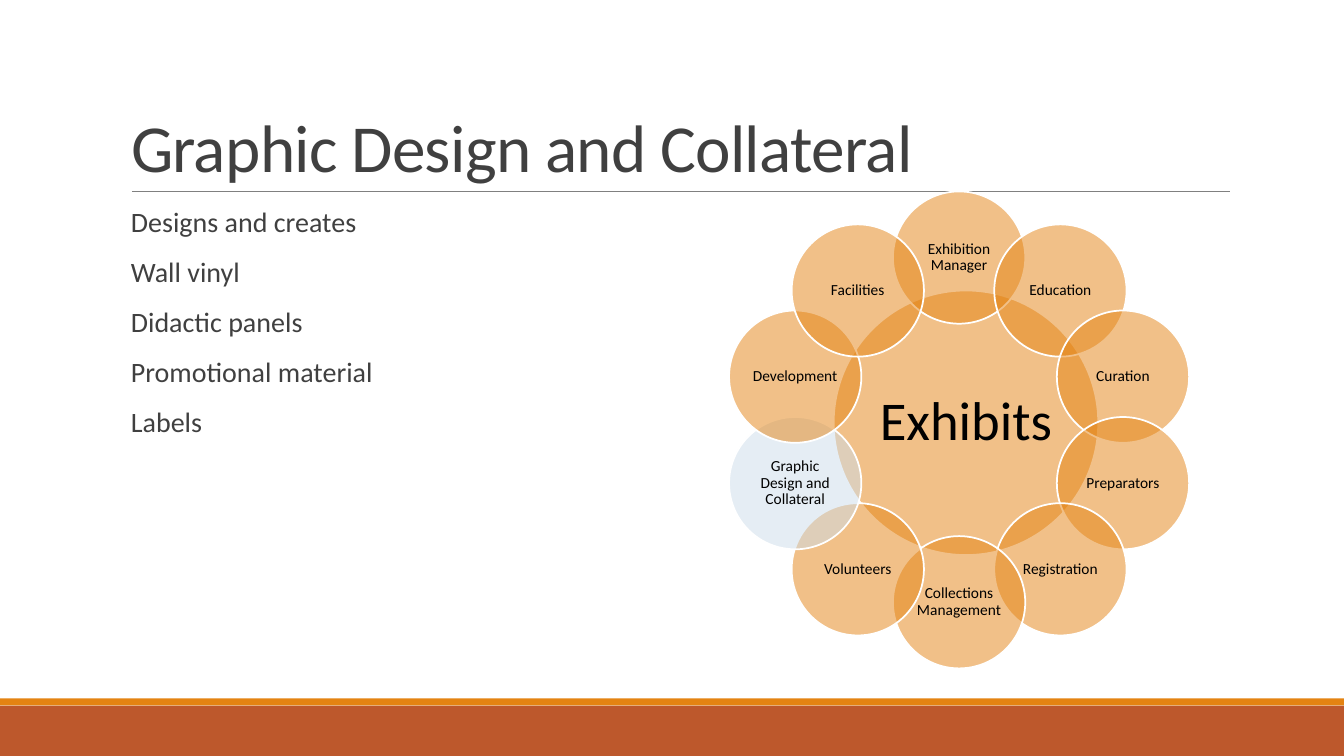
"""Build the Graphic Design and Collateral slide with its ring of exhibit roles."""
from math import cos, pi, sin

from lxml import etree
from pptx import Presentation
from pptx.dml.color import RGBColor
from pptx.enum.shapes import MSO_CONNECTOR, MSO_SHAPE
from pptx.enum.text import MSO_ANCHOR, MSO_AUTO_SIZE, PP_ALIGN
from pptx.oxml.ns import qn
from pptx.util import Pt

RECTANGLE, OVAL = MSO_SHAPE.RECTANGLE, MSO_SHAPE.OVAL
STRAIGHT = MSO_CONNECTOR.STRAIGHT
TOP, MIDDLE, BOTTOM = MSO_ANCHOR.TOP, MSO_ANCHOR.MIDDLE, MSO_ANCHOR.BOTTOM
LEFT, CENTER = PP_ALIGN.LEFT, PP_ALIGN.CENTER
NO_AUTOFIT = MSO_AUTO_SIZE.NONE

ORANGE = RGBColor(0xE4, 0x83, 0x12)
RUST = RGBColor(0xBD, 0x58, 0x2C)
PALE_BLUE = RGBColor(0xCC, 0xDD, 0xEA)
GREY = RGBColor(0x80, 0x80, 0x80)
DARK_GREY = RGBColor(0x40, 0x40, 0x40)
BLACK = RGBColor(0, 0, 0)
WHITE = RGBColor(0xFF, 0xFF, 0xFF)

WIDTH, HEIGHT = 960, 540
TITLE = "Graphic Design and Collateral"
DUTIES = ["Designs and creates", "Wall vinyl", "Didactic panels",
          "Promotional material", "Labels"]
ROLES = ["Exhibition Manager", "Education", "Curation", "Preparators",
         "Registration", "Collections Management", "Volunteers", TITLE,
         "Development", "Facilities"]
RING_X, RING_Y, RING_RADIUS = 685.1, 307.1, 123.1
ROLE_SIZE, HUB_SIZE = 94.5, 189
HUB_X, HUB_Y = 690, 302


class SlideBuilder:
    """Draw styled elements on one slide, with lengths in points."""

    font_name = "Calibri"

    def __init__(self, slide):
        self.slide = slide

    def fill_text(self, frame, lines, size, color, align, anchor, insets,
                  spacing=0.9):
        """Fill a text frame with one paragraph per line."""
        frame.word_wrap = True
        frame.auto_size = NO_AUTOFIT
        frame.vertical_anchor = anchor
        side, edge = insets
        frame.margin_left = frame.margin_right = Pt(side)
        frame.margin_top = frame.margin_bottom = Pt(edge)
        for index, line in enumerate(lines):
            paragraph = frame.add_paragraph() if index else frame.paragraphs[0]
            paragraph.alignment = align
            paragraph.line_spacing = spacing
            paragraph.space_before = Pt(12 if index else 0)
            paragraph.space_after = Pt(2 if len(lines) > 1 else 0)
            run = paragraph.add_run()
            run.text = line
            run.font.name = self.font_name
            run.font.size = Pt(size)
            run.font.color.rgb = color

    def title(self, text, left, top, width, height):
        """Place and format the title placeholder."""
        heading = self.slide.shapes.title
        heading.left, heading.top = Pt(left), Pt(top)
        heading.width, heading.height = Pt(width), Pt(height)
        self.fill_text(heading.text_frame, [text], 48, DARK_GREY, LEFT, BOTTOM,
                       (7.2, 3.6), 0.85)
        for properties in heading.element.iter(qn("a:rPr")):
            properties.set("spc", "-50")

    def text_list(self, lines, left, top, width, height):
        """Add a box with one plain paragraph per line."""
        box = self.slide.shapes.add_textbox(Pt(left), Pt(top), Pt(width), Pt(height))
        self.fill_text(box.text_frame, lines, 20, DARK_GREY, LEFT, TOP, (7.2, 3.6))

    def shape(self, kind, left, top, width, height, color):
        """Add a filled preset shape without shadow or outline."""
        shape = self.slide.shapes.add_shape(
            kind, Pt(left), Pt(top), Pt(width), Pt(height))
        shape.shadow.inherit = False
        shape.fill.solid()
        shape.fill.fore_color.rgb = color
        shape.line.fill.background()
        return shape

    def circle(self, label, x, y, diameter, color, size, inset):
        """Add a half-transparent labelled circle centred on a point."""
        circle = self.shape(OVAL, x - diameter / 2, y - diameter / 2,
                            diameter, diameter, color)
        fill_color = circle.element.spPr.find(qn("a:solidFill")).find(qn("a:srgbClr"))
        etree.SubElement(fill_color, qn("a:alpha")).set("val", "50000")
        circle.line.color.rgb = WHITE
        circle.line.width = Pt(1.25)
        self.fill_text(circle.text_frame, [label], size, BLACK, CENTER, MIDDLE,
                       (inset, inset))

    def rule(self, left, right, y):
        """Add a thin horizontal line."""
        line = self.slide.shapes.add_connector(
            STRAIGHT, Pt(left), Pt(y), Pt(right), Pt(y))
        line.line.color.rgb = GREY
        line.line.width = Pt(0.5)
        etree.SubElement(line.element.spPr, qn("a:effectLst"))


def main():
    """Build and save the slide."""
    deck = Presentation()
    deck.slide_width, deck.slide_height = Pt(WIDTH), Pt(HEIGHT)
    builder = SlideBuilder(deck.slides.add_slide(deck.slide_layouts[5]))

    builder.shape(RECTANGLE, 0, 504, WIDTH, 36, RUST)
    builder.shape(RECTANGLE, 0, 498.8, WIDTH, 5.04, ORANGE)
    builder.rule(94.3, 878.8, 136.8)
    builder.title(TITLE, 86.4, 22.6, 792, 114.2)
    builder.text_list(DUTIES, 86.4, 145.4, 792, 316.8)

    builder.circle("Exhibits", HUB_X, HUB_Y, HUB_SIZE, ORANGE, 39, 3.6)
    for index, role in enumerate(ROLES):
        angle = 2 * pi * index / len(ROLES)
        builder.circle(role, RING_X + RING_RADIUS * sin(angle),
                       RING_Y - RING_RADIUS * cos(angle), ROLE_SIZE,
                       PALE_BLUE if role == TITLE else ORANGE, 11, 1.4)

    deck.save("out.pptx")


if __name__ == "__main__":
    main()
